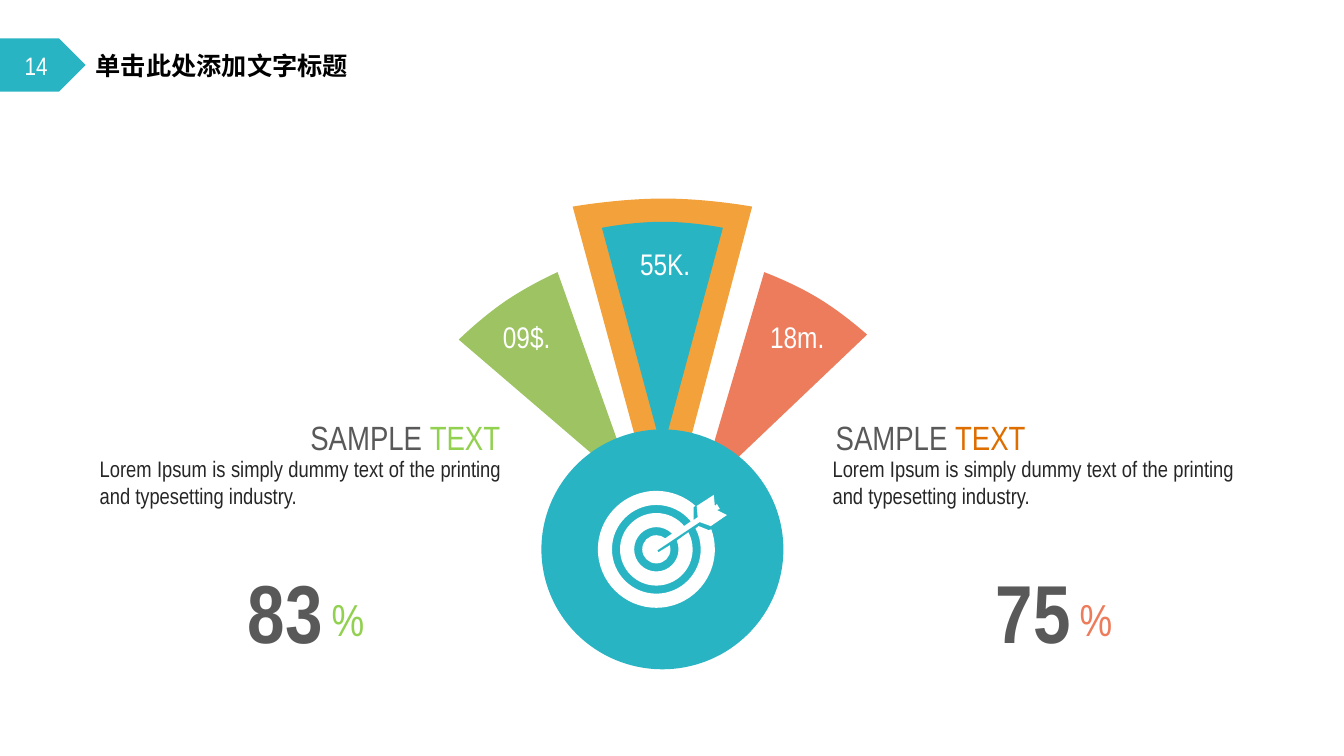
from math import cos, radians, sin, tan

from lxml import etree
from pptx import Presentation
from pptx import util as u
from pptx.dml.color import RGBColor
from pptx.enum import shapes, text
from pptx.oxml.ns import qn

FONT = "Arial Narrow"
TEAL, GREEN, CORAL, AMBER = "28B4C3", "9DC362", "ED7C5C", "F3A13A"
LIME, ORANGE, GREY, DARK, WHITE = "92D050", "DE6E00", "595959", "262626", "FFFFFF"
LEFT, CENTER, JUSTIFY = text.PP_ALIGN.LEFT, text.PP_ALIGN.CENTER, text.PP_ALIGN.JUSTIFY


def rgb(value):
    return RGBColor.from_string(value)


def paint(sp, color):
    sp.shadow.inherit = False
    sp.fill.solid()
    sp.fill.fore_color.rgb = rgb(color)
    sp.line.fill.background()


def write(sp, runs, size, bold=False, align=LEFT, wrap=True, anchor=text.MSO_ANCHOR.TOP):
    tf = sp.text_frame
    tf.word_wrap = wrap
    tf.auto_size = text.MSO_AUTO_SIZE.NONE
    tf.vertical_anchor = anchor
    p = tf.paragraphs[0]
    p.alignment = align
    for words, color in runs:
        r = p.add_run()
        r.text = words
        r.font.name, r.font.size, r.font.bold = FONT, u.Pt(size), bold
        r.font.color.rgb = rgb(color)


def label(s, x, y, w, h, runs, size, **style):
    sp = s.shapes.add_textbox(u.Inches(x), u.Inches(y), u.Inches(w), u.Inches(h))
    write(sp, runs, size, **style)


def preset(s, kind, x, y, w, h, color):
    sp = s.shapes.add_shape(kind, u.Inches(x), u.Inches(y), u.Inches(w), u.Inches(h))
    paint(sp, color)
    return sp


# Outline: each step is (end,) for a line or (control, control, end) for a curve
def outline(s, steps, color):
    ends = [(u.Inches(x), u.Inches(y)) for x, y in (step[-1] for step in steps)]
    fb = s.shapes.build_freeform(*ends[0])
    fb.add_line_segments(ends[1:], close=True)
    sp = fb.convert_to_shape()
    paint(sp, color)
    for segment, step in zip(sp.element.xpath(".//a:lnTo"), steps[1:]):
        if len(step) == 3:
            segment.tag = qn("a:cubicBezTo")
            for i, (x, y) in enumerate(step[:2]):
                pt = etree.Element(qn("a:pt"))
                pt.set("x", str(u.Inches(x) - sp.left))
                pt.set("y", str(u.Inches(y) - sp.top))
                segment.insert(i, pt)


# Header: page tag and title
def header(s, x, y, number, title):
    tag = preset(s, shapes.MSO_SHAPE.PENTAGON, x, y, 0.85, 0.53, TEAL)
    write(tag, [(number, WHITE)], 18, align=CENTER, anchor=text.MSO_ANCHOR.MIDDLE)
    sp = s.shapes.title
    sp.left, sp.top = u.Inches(x + 0.85), u.Inches(y + 0.07)
    sp.width, sp.height = u.Inches(2.94), u.Inches(0.4)
    write(sp, [(title, "000000")], 18, bold=True, wrap=False)


# Wedge: a tip and an arched edge whose crown runs parallel to its chord
def wedge(s, tip, start, crown, end, color):
    dx, dy = (end[0] - start[0]) / 4, (end[1] - start[1]) / 4
    before = (crown[0] - dx, crown[1] - dy)
    after = (crown[0] + dx, crown[1] + dy)
    outline(s, [(tip,), (start,), (start, before, crown), (after, end, end)], color)


# Target: one outline winding through the rings and along the dart
def target(s, cx, cy):
    def arc(radius, start, end):
        low, high = sorted((start, end))
        angles = [low] + [a for a in range(-360, 361, 90) if low < a < high] + [high]
        if start > end:
            angles.reverse()

        def spot(a, pull=0):
            a = radians(a)
            return (cx + radius * (cos(a) - pull * sin(a)),
                    cy + radius * (sin(a) + pull * cos(a)))

        steps = [(spot(start),)]
        for a, b in zip(angles, angles[1:]):
            pull = 4 / 3 * tan(radians(b - a) / 4)
            steps.append((spot(a, pull), spot(b, -pull), spot(b)))
        return steps

    def lines(*offsets):
        return [((cx + dx, cy + dy),) for dx, dy in offsets]

    rings = (arc(0.44, -28, 321) + arc(0.36, -40, -388)
             + arc(0.22, -23, 315) + arc(0.14, -51, -377))
    dart = lines((0.02, 0.03), (0.01, 0.01), (0.43, -0.27), (0.54, -0.23), (0.7, -0.34),
                 (0.6, -0.39), (0.63, -0.4), (0.6, -0.45), (0.58, -0.43), (0.57, -0.54),
                 (0.4, -0.43), (0.41, -0.32), (0.37, -0.29), (0.37, -0.42))
    notch = lines((0.52, -0.19), (0.42, -0.23))
    outline(s, rings + dart + arc(0.58, -48, -380) + notch, WHITE)


# Medal: wedges, disc, target and the wedge labels
def medal(s, x, y):
    wedges = [
        ((1.75, 2.9), (0, 1.4), (0.46, 1.02), (0.98, 0.73), GREEN),
        ((2.38, 2.94), (3.03, 0.73), (3.57, 0.99), (4.05, 1.35), CORAL),
        ((2.03, 3.4), (1.13, 0.08), (2.03, 0), (2.91, 0.08), AMBER),
        ((2.02, 2.51), (1.42, 0.29), (2.02, 0.23), (2.62, 0.29), TEAL),
    ]
    for *points, color in wedges:
        wedge(s, *[(x + dx, y + dy) for dx, dy in points], color)
    preset(s, shapes.MSO_SHAPE.OVAL, x + 0.82, y + 2.29, 2.4, 2.38, TEAL)
    target(s, x + 1.96, y + 3.48)
    for dx, dy, words in [(1.7, 0.42, "55K."), (2.99, 1.14, "18m."), (0.34, 1.14, "09$.")]:
        label(s, x + dx, y + dy, 0.83, 0.46, [(words, WHITE)], 21.3, wrap=False)


# Side block: heading, paragraph and percentage
def side_block(s, x, y, heading_dx, figure_dx, figure, accent, sign_color):
    label(s, x + heading_dx, y, 2.3, 0.5,
          [("SAMPLE ", GREY), ("TEXT", accent)], 24, wrap=False)
    label(s, x, y + 0.38, 4.18, 0.64,
          [("Lorem Ipsum is simply dummy text of the printing and typesetting industry.",
            DARK)], 16, align=JUSTIFY)
    label(s, x + figure_dx, y + 1.43, 1.22, 1.09, [(figure, GREY)], 58.7,
          bold=True, wrap=False)
    label(s, x + figure_dx + 0.83, y + 1.73, 0.7, 0.64, [("%", sign_color)], 32, wrap=False)


def main():
    prs = Presentation()
    prs.slide_width, prs.slide_height = u.Inches(13.33), u.Inches(7.5)
    s = prs.slides.add_slide(prs.slide_layouts[5])
    medal(s, 4.55, 1.97)
    side_block(s, 8.16, 4.09, 0.03, 1.62, "75", ORANGE, CORAL)
    side_block(s, 0.89, 4.09, 2.09, 1.47, "83", LIME, LIME)
    header(s, 0, 0.38, "14", "单击此处添加文字标题")
    prs.save("out.pptx")


if __name__ == "__main__":
    main()
